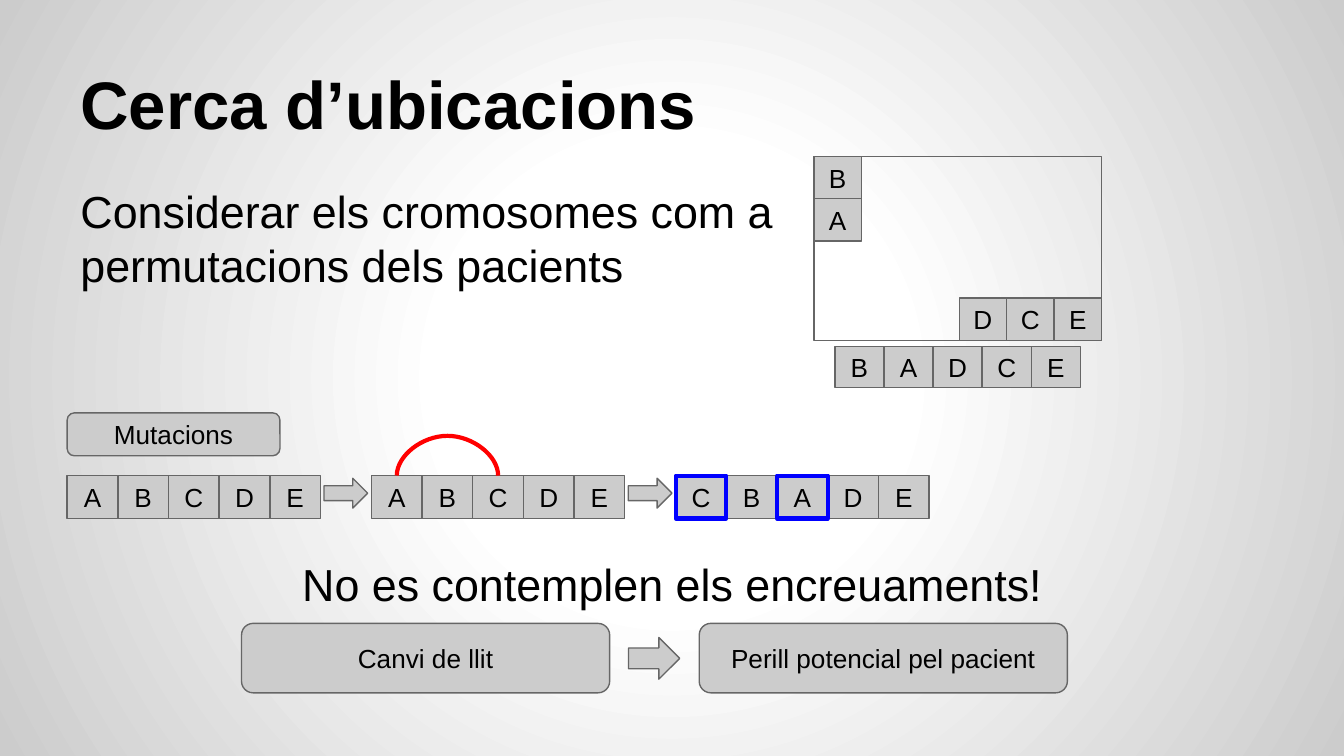
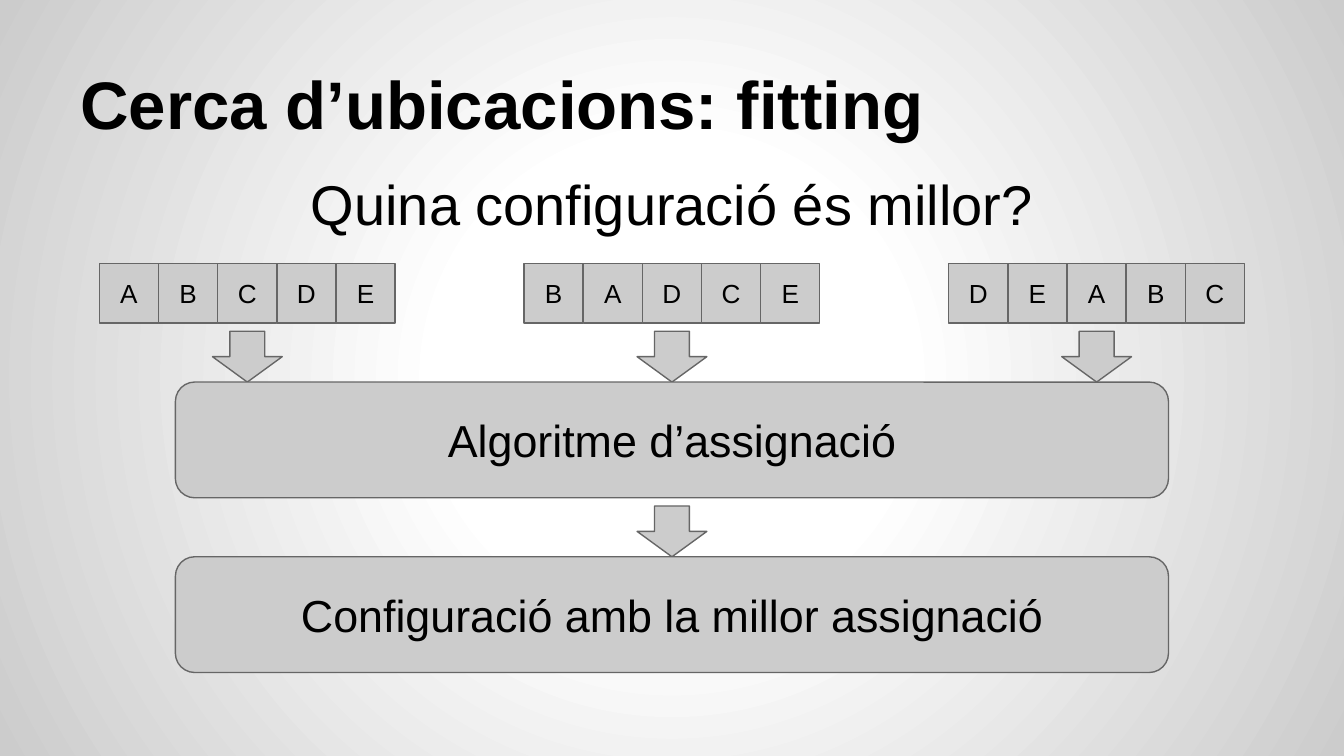
from dataclasses import dataclass

from pptx import Presentation
from pptx.dml.color import RGBColor
from pptx.enum.shapes import MSO_CONNECTOR as Link, MSO_SHAPE as Preset
from pptx.enum.text import MSO_ANCHOR as Anchor, PP_ALIGN as Align
from pptx.oxml import parse_xml
from pptx.oxml.ns import nsdecls, qn
from pptx.shapes.autoshape import Shape
from pptx.slide import Slide
from pptx.util import Pt

FONT = "Arial"
BLACK = "000000"
GREY = "CCCCCC"
OUTLINE = "666666"
RED = "FF0000"
BLUE = "0000FF"
GRADIENT = ((0, "FFFFFF"), (30000, "FFFFFF"), (100000, GREY))
SLIDE_WIDTH, SLIDE_HEIGHT = 720, 405
MARGIN = 36
CONTENT_WIDTH = SLIDE_WIDTH - 2 * MARGIN
CENTRE = SLIDE_WIDTH / 2
INSET = 7.2


@dataclass(frozen=True)
class Box:
    left: float
    top: float
    width: float
    height: float


@dataclass(frozen=True)
class Chromosome:
    genes: str
    left: float
    top: float
    cell_width: float
    cell_height: float
    swapped: str = ""
    vertical: bool = False


@dataclass(frozen=True)
class Panel:
    text: str
    box: Box
    size: float = 14


@dataclass(frozen=True)
class BlockArrow:
    centre_x: float
    centre_y: float
    width: float
    length: float
    rotation: float = 0


def colour(value: str) -> RGBColor:
    return RGBColor.from_string(value)


def write(shape: Shape, text: str, *, size: float = 14, bold: bool = False,
          align: Align = Align.CENTER, anchor: Anchor = Anchor.MIDDLE,
          space_before: float = 0) -> None:
    frame = shape.text_frame
    frame.word_wrap = True
    frame.vertical_anchor = anchor
    frame.margin_left = frame.margin_right = Pt(INSET)
    frame.margin_top = frame.margin_bottom = Pt(INSET)
    paragraph = frame.paragraphs[0]
    paragraph.alignment = align
    paragraph.space_before = Pt(space_before)
    run = paragraph.add_run()
    run.text = text
    run.font.name = FONT
    run.font.size = Pt(size)
    run.font.bold = bold
    run.font.color.rgb = colour(BLACK)


def add_text(slide: Slide, text: str, box: Box, **style) -> None:
    holder = slide.shapes.add_textbox(
        Pt(box.left), Pt(box.top), Pt(box.width), Pt(box.height))
    write(holder, text, **style)


def add_block(slide: Slide, preset: Preset, box: Box, *, fill: str | None = GREY,
              line: str = OUTLINE, line_width: float = 0.75) -> Shape:
    block = slide.shapes.add_shape(
        preset, Pt(box.left), Pt(box.top), Pt(box.width), Pt(box.height))
    block.shadow.inherit = False
    if fill is None:
        block.fill.background()
    else:
        block.fill.solid()
        block.fill.fore_color.rgb = colour(fill)
    block.line.color.rgb = colour(line)
    block.line.width = Pt(line_width)
    return block


def add_chromosome(slide: Slide, row: Chromosome) -> dict[str, Shape]:
    cells = {}
    for gene in sorted(row.genes, key=lambda name: name in row.swapped):
        place = row.genes.index(gene)
        column, line = (0, place) if row.vertical else (place, 0)
        box = Box(row.left + column * row.cell_width,
                  row.top + line * row.cell_height,
                  row.cell_width, row.cell_height)
        style = {"line": BLUE, "line_width": 2.25} if gene in row.swapped else {}
        cells[gene] = add_block(slide, Preset.RECTANGLE, box, **style)
        write(cells[gene], gene)
    return cells


def add_panel(slide: Slide, panel: Panel) -> None:
    write(add_block(slide, Preset.ROUNDED_RECTANGLE, panel.box),
          panel.text, size=panel.size)


def add_arrow(slide: Slide, arrow: BlockArrow) -> None:
    box = Box(arrow.centre_x - arrow.width / 2,
              arrow.centre_y - arrow.length / 2, arrow.width, arrow.length)
    add_block(slide, Preset.DOWN_ARROW, box).rotation = arrow.rotation


def add_swap_arc(slide: Slide, first: Shape, second: Shape) -> None:
    arc = slide.shapes.add_connector(Link.CURVE, 0, 0, 0, 0)
    arc.begin_connect(first, 0)
    arc.end_connect(second, 0)
    span = second.left - first.left
    middle = (first.left + second.left + first.width) // 2
    arc.left, arc.top = middle, first.top - span // 2
    arc.width, arc.height = Pt(0.05), span
    arc.line.color.rgb = colour(RED)
    arc.line.width = Pt(2.25)
    properties = arc.element.spPr
    transform = properties.find(qn("a:xfrm"))
    for name in ("flipH", "flipV"):
        transform.attrib.pop(name, None)
    transform.set("rot", "16200000")
    transform.set("flipH", "1")
    geometry = properties.find(qn("a:prstGeom"))
    for adjustments in geometry.findall(qn("a:avLst")):
        geometry.remove(adjustments)
    geometry.append(parse_xml(
        f'<a:avLst {nsdecls("a")}><a:gd name="adj1" fmla="val -37500000"/></a:avLst>'))
    properties.append(parse_xml(f'<a:effectLst {nsdecls("a")}/>'))


def add_slide(deck: Presentation, title: str) -> Slide:
    slide = deck.slides.add_slide(deck.slide_layouts[6])
    stops = "".join(f'<a:gs pos="{position}"><a:srgbClr val="{value}"/></a:gs>'
                    for position, value in GRADIENT)
    slide.element.cSld.insert(0, parse_xml(
        f'<p:bg {nsdecls("p", "a")}><p:bgPr><a:gradFill><a:gsLst>{stops}</a:gsLst>'
        '<a:path path="circle"><a:fillToRect l="50000" t="50000" r="50000" b="50000"/>'
        '</a:path></a:gradFill><a:effectLst/></p:bgPr></p:bg>'))
    add_text(slide, title, Box(MARGIN, 16.3, CONTENT_WIDTH, 67.5),
             size=36, bold=True, align=Align.LEFT, anchor=Anchor.BOTTOM)
    return slide


def build_search(deck: Presentation) -> None:
    slide = add_slide(deck, "Cerca d’ubicacions")
    add_text(slide, "Considerar els cromosomes com a permutacions dels pacients",
             Box(MARGIN, 94.5, 400, 65.5), size=24, align=Align.LEFT, space_before=6)

    room = Box(436.1, 83.8, 154, 98.6)
    bed_width, bed_height = 25.4, 22.7
    add_block(slide, Preset.RECTANGLE, room, fill=None)
    for beds in (
        Chromosome("BA", room.left, room.top, bed_width, bed_height, vertical=True),
        Chromosome("DCE", room.left + room.width - 3 * bed_width,
                   room.top + room.height - bed_height, bed_width, bed_height),
        Chromosome("BADCE", 447.3, 185.6, 26.3, 22),
    ):
        add_chromosome(slide, beds)

    add_text(slide, "No es contemplen els encreuaments!",
             Box(MARGIN, 294, CONTENT_WIDTH, 37.5), size=24, space_before=6)
    for text, left in (("Canvi de llit", 129.4), ("Perill potencial pel pacient", 374.6)):
        add_panel(slide, Panel(text, Box(left, 334, 197.2, 37.2)))
    add_arrow(slide, BlockArrow(350.4, 352.7, 22.3, 27.4, 270))

    add_panel(slide, Panel("Mutacions", Box(MARGIN, 221.2, 114, 23)))
    pitch, top = 163, 254.8
    steps = [
        add_chromosome(slide, Chromosome(genes, MARGIN + step * pitch, top,
                                         27.15, 23, swapped))
        for step, (genes, swapped) in enumerate(
            (("ABCDE", ""), ("ABCDE", ""), ("CBADE", "CA")))
    ]
    for step in range(2):
        add_arrow(slide, BlockArrow(185.3 + step * pitch, 264.2, 16, 23.4, 270))
    add_swap_arc(slide, steps[1]["A"], steps[1]["C"])


def build_fitting(deck: Presentation) -> None:
    slide = add_slide(deck, "Cerca d’ubicacions: fitting")
    add_text(slide, "Quina configuració és millor?",
             Box(MARGIN, 83.8, CONTENT_WIDTH, 57.5),
             size=30, anchor=Anchor.TOP, space_before=6)

    cell, pitch = 31.7, 227.5
    panel_width, panel_height, panel_top, panel_pitch = 532, 62, 204.7, 93.6
    arrow_width, arrow_length = 37.4, 27.2
    arrow_y = panel_top - arrow_length / 2
    for place, genes in enumerate(("ABCDE", "BADCE", "DEABC"), -1):
        centre = CENTRE + place * pitch
        add_chromosome(slide, Chromosome(genes, centre - 2.5 * cell, 141.3, cell, cell))
        add_arrow(slide, BlockArrow(centre, arrow_y, arrow_width, arrow_length))
    add_arrow(slide, BlockArrow(CENTRE, arrow_y + panel_pitch, arrow_width, arrow_length))
    for step, text in enumerate(
            ("Algoritme d’assignació", "Configuració amb la millor assignació")):
        add_panel(slide, Panel(text, Box(CENTRE - panel_width / 2,
                                         panel_top + step * panel_pitch,
                                         panel_width, panel_height), 24))


def main() -> None:
    deck = Presentation()
    deck.slide_width, deck.slide_height = Pt(SLIDE_WIDTH), Pt(SLIDE_HEIGHT)
    build_search(deck)
    build_fitting(deck)
    deck.save("out.pptx")


if __name__ == "__main__":
    main()
